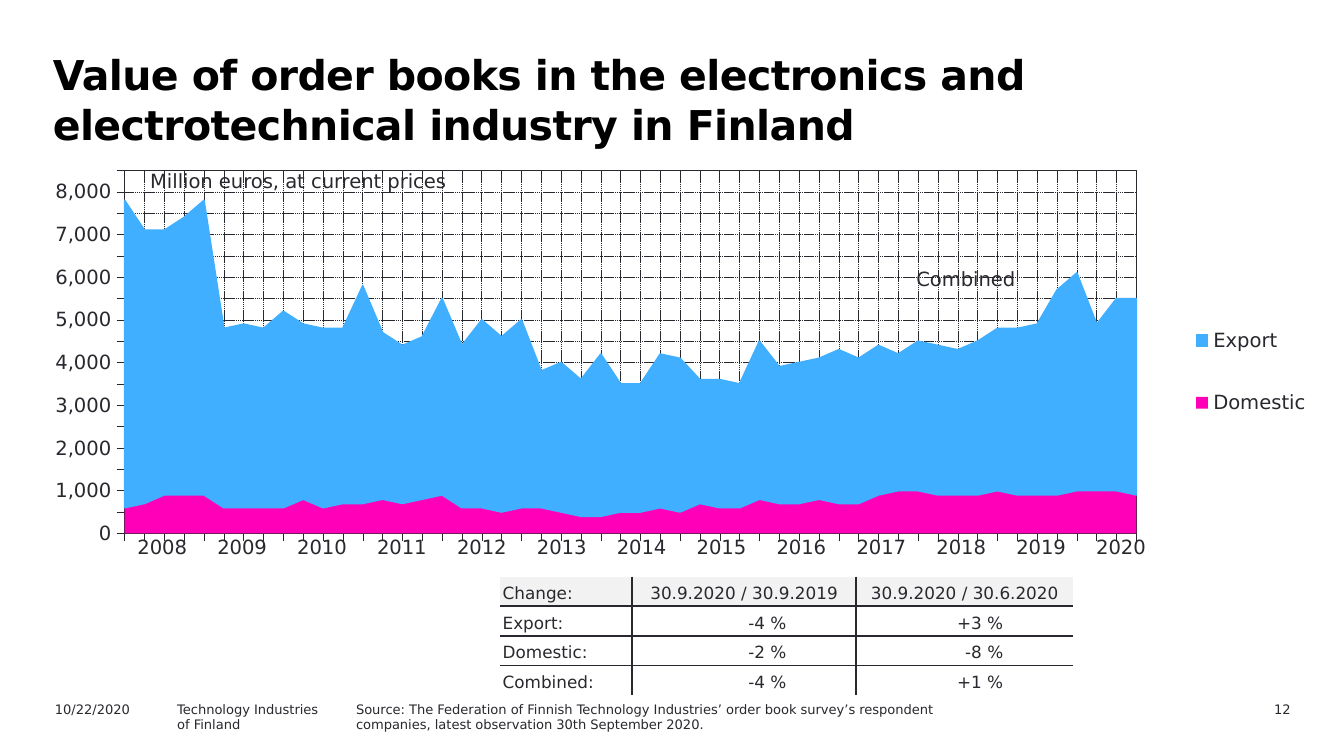
from lxml.etree import SubElement
from pptx import Presentation
from pptx.chart.data import CategoryChartData
from pptx.dml.color import RGBColor
from pptx.enum.chart import XL_CHART_TYPE, XL_LEGEND_POSITION, XL_TICK_LABEL_POSITION, XL_TICK_MARK
from pptx.enum.dml import MSO_LINE
from pptx.enum.text import MSO_ANCHOR, PP_ALIGN
from pptx.oxml import parse_xml
from pptx.oxml.ns import nsdecls, qn
from pptx.util import Cm, Pt

BLACK = RGBColor(0x00, 0x00, 0x00)
DARK = RGBColor(0x29, 0x28, 0x2E)
LIGHT_GREY = RGBColor(0xF2, 0xF2, 0xF2)
WHITE = RGBColor(0xFF, 0xFF, 0xFF)
PINK = RGBColor(0xFF, 0x00, 0xB8)
BLUE = RGBColor(0x40, 0xAF, 0xFF)
FONT = "DejaVu Sans"
NO_TABLE_STYLE = "{2D5ABB26-0587-4C30-8999-92F81FD0307C}"


def style_font(font, size, color=DARK):
    font.name = FONT
    font.size = Pt(size)
    font.color.rgb = color


def set_layout(parent, index, x, y, width, height, target=""):
    """Place a chart part by fractions of the chart; index is its slot in the parent."""
    for old_layout in parent.findall(qn("c:layout")):
        parent.remove(old_layout)
    parent.insert(index, parse_xml(
        f'<c:layout {nsdecls("c")}><c:manualLayout>{target}'
        '<c:xMode val="edge"/><c:yMode val="edge"/>'
        f'<c:x val="{x}"/><c:y val="{y}"/><c:w val="{width}"/><c:h val="{height}"/>'
        '</c:manualLayout></c:layout>'))


presentation = Presentation()
presentation.slide_width = Cm(25.4)
presentation.slide_height = Cm(14.29)
slide = presentation.slides.add_slide(presentation.slide_layouts[6])

# Order book chart
domestic = [600, 700, 900, 900, 900, 600, 600, 600, 600, 800, 600, 700, 700,
            800, 700, 800, 900, 600, 600, 500, 600, 600, 500, 400, 400, 500,
            500, 600, 500, 700, 600, 600, 800, 700, 700, 800, 700, 700, 900,
            1000, 1000, 900, 900, 900, 1000, 900, 900, 900, 1000, 1000, 1000, 900]
export = [7200, 6400, 6200, 6500, 6900, 4200, 4300, 4200, 4600, 4100, 4200, 4100, 5100,
          3900, 3700, 3800, 4600, 3800, 4400, 4100, 4400, 3200, 3500, 3200, 3800, 3000,
          3000, 3600, 3600, 2900, 3000, 2900, 3700, 3200, 3300, 3300, 3600, 3400, 3500,
          3200, 3500, 3500, 3400, 3600, 3800, 3900, 4000, 4800, 5100, 3900, 4500, 4600]
chart_data = CategoryChartData(number_format="#,##0")
chart_data.categories = [str(quarter) for quarter in range(1, len(export) + 1)]
chart_data.add_series("Domestic", domestic)
chart_data.add_series("Export", export)
chart = slide.shapes.add_chart(XL_CHART_TYPE.AREA_STACKED, Cm(0.51), Cm(3),
                               Cm(24.61), Cm(7.75), chart_data).chart
chart.has_title = False
style_font(chart.font, 10.5)
chart.plots[0].vary_by_categories = False
for series, color in zip(chart.plots[0].series, (PINK, BLUE)):
    series.format.fill.solid()
    series.format.fill.fore_color.rgb = color
    series.format.line.fill.background()
export_line = chart.plots[0].series[1].format.line
export_line.color.rgb = BLUE
export_line.width = Pt(0.88)

for axis in (chart.category_axis, chart.value_axis):
    axis.major_tick_mark = XL_TICK_MARK.OUTSIDE
    axis.minor_tick_mark = XL_TICK_MARK.NONE
    axis.format.line.color.rgb = DARK
    axis.format.line.width = Pt(0.22)
    axis.has_major_gridlines = True
    gridline = axis.major_gridlines.format.line
    gridline.color.rgb = DARK
    gridline.width = Pt(0.25)
    gridline.dash_style = MSO_LINE.SQUARE_DOT
    style_font(axis.tick_labels.font, 10.5)
chart.category_axis.tick_label_position = XL_TICK_LABEL_POSITION.NONE
chart.value_axis.minimum_scale = 0
chart.value_axis.maximum_scale = 8500
chart.value_axis.major_unit = 500
chart.value_axis.tick_labels.number_format = "#,##0"
chart.value_axis.tick_labels.number_format_is_linked = False

chart.has_legend = True
chart.legend.position = XL_LEGEND_POSITION.RIGHT
chart.legend.include_in_layout = False
style_font(chart.legend.font, 10.5)
set_layout(chart.legend._element, 1, 0.88, 0.32, 0.12, 0.4)

plot_area = chart._chartSpace.chart.plotArea
set_layout(plot_area, 0, 0.075, 0.029, 0.777, 0.885, '<c:layoutTarget val="inner"/>')
plot_area.append(parse_xml(
    f'<c:spPr {nsdecls("c", "a")}><a:noFill/><a:ln w="9525"><a:solidFill>'
    f'<a:srgbClr val="{DARK}"/></a:solidFill></a:ln></c:spPr>'))

# Change table
change_rows = [
    ("Change:", "30.9.2020 / 30.9.2019", "30.9.2020 / 30.6.2020"),
    ("Export:", "-4 %", "+3 %"),
    ("Domestic:", "-2 %", "-8 %"),
    ("Combined:", "-4 %", "+1 %"),
]
column_widths = (2.49, 4.24, 4.1)
change_frame = slide.shapes.add_table(4, 3, Cm(9.45), Cm(10.9), Cm(10.83), Cm(2.24))
for column, width in zip(change_frame.table.columns, column_widths):
    column.width = Cm(width)
for row_index, texts in enumerate(change_rows):
    for column_index, text in enumerate(texts):
        cell = change_frame.table.cell(row_index, column_index)
        cell.text = text
        cell.vertical_anchor = MSO_ANCHOR.BOTTOM
        cell.margin_left = cell.margin_right = Cm(0.05)
        cell.margin_top = cell.margin_bottom = Cm(0.05)
        paragraph = cell.text_frame.paragraphs[0]
        style_font(paragraph.font, 9)
        if column_index and row_index:
            paragraph.alignment = PP_ALIGN.RIGHT
            cell.margin_right = Cm(1.32)
        elif column_index:
            paragraph.alignment = PP_ALIGN.CENTER
        inner_edges = {"a:lnL": column_index > 0, "a:lnR": column_index < 2,
                       "a:lnT": row_index > 0, "a:lnB": row_index < 3}
        for edge, is_inner in inner_edges.items():
            if is_inner:
                line = SubElement(cell._tc.get_or_add_tcPr(), qn(edge), w=str(Pt(1)))
                line_fill = SubElement(line, qn("a:solidFill"))
                SubElement(line_fill, qn("a:srgbClr"), val=str(DARK))
        cell.fill.solid()
        cell.fill.fore_color.rgb = WHITE if row_index else LIGHT_GREY

# Year labels under the chart
years = range(2008, 2021)
year_frame = slide.shapes.add_table(1, len(years), Cm(2.31), Cm(10.01),
                                    Cm(1.51 * len(years)), Cm(0.79))
for cell, year in zip(year_frame.table.rows[0].cells, years):
    cell.text = str(year)
    cell.fill.background()
    paragraph = cell.text_frame.paragraphs[0]
    paragraph.alignment = PP_ALIGN.CENTER
    style_font(paragraph.font, 10.5)

for frame in (change_frame, year_frame):
    frame.table.first_row = False
    frame.table.horz_banding = False
    frame.table._tbl.tblPr.find(qn("a:tableStyleId")).text = NO_TABLE_STYLE

# Title, chart notes and footer: text, left, top, width, height, size
text_items = [
    ("Value of order books in the electronics and electrotechnical industry in Finland",
     0.75, 0.79, 22.43, 1.8, 22),
    ("Million euros, at current prices", 2.59, 3.07, 6.2, 0.69, 10.5),
    ("Combined", 17.07, 4.93, 2.69, 0.69, 10.5),
    ("10/22/2020", 0.79, 13.13, 2.54, 0.46, 7),
    ("Technology Industries\nof Finland", 3.1, 13.13, 4.57, 0.46, 7),
    ("Source: The Federation of Finnish Technology Industries’ order book survey’s "
     "respondent companies, latest observation 30th September 2020.",
     6.48, 13.13, 12.7, 0.66, 7),
    ("12", 22.25, 13.13, 2.39, 0.46, 7),
]
for text, left, top, width, height, size in text_items:
    box = slide.shapes.add_textbox(Cm(left), Cm(top), Cm(width), Cm(height))
    box.text_frame.word_wrap = True
    box.text_frame.text = text
    for paragraph in box.text_frame.paragraphs:
        style_font(paragraph.font, size, BLACK if size == 22 else DARK)
        if size == 22:
            paragraph.font.bold = True
            paragraph.line_spacing = Pt(27)
            paragraph.runs[0].font._element.set("spc", "-30")
        if text == "12":
            paragraph.alignment = PP_ALIGN.RIGHT

presentation.save("out.pptx")
